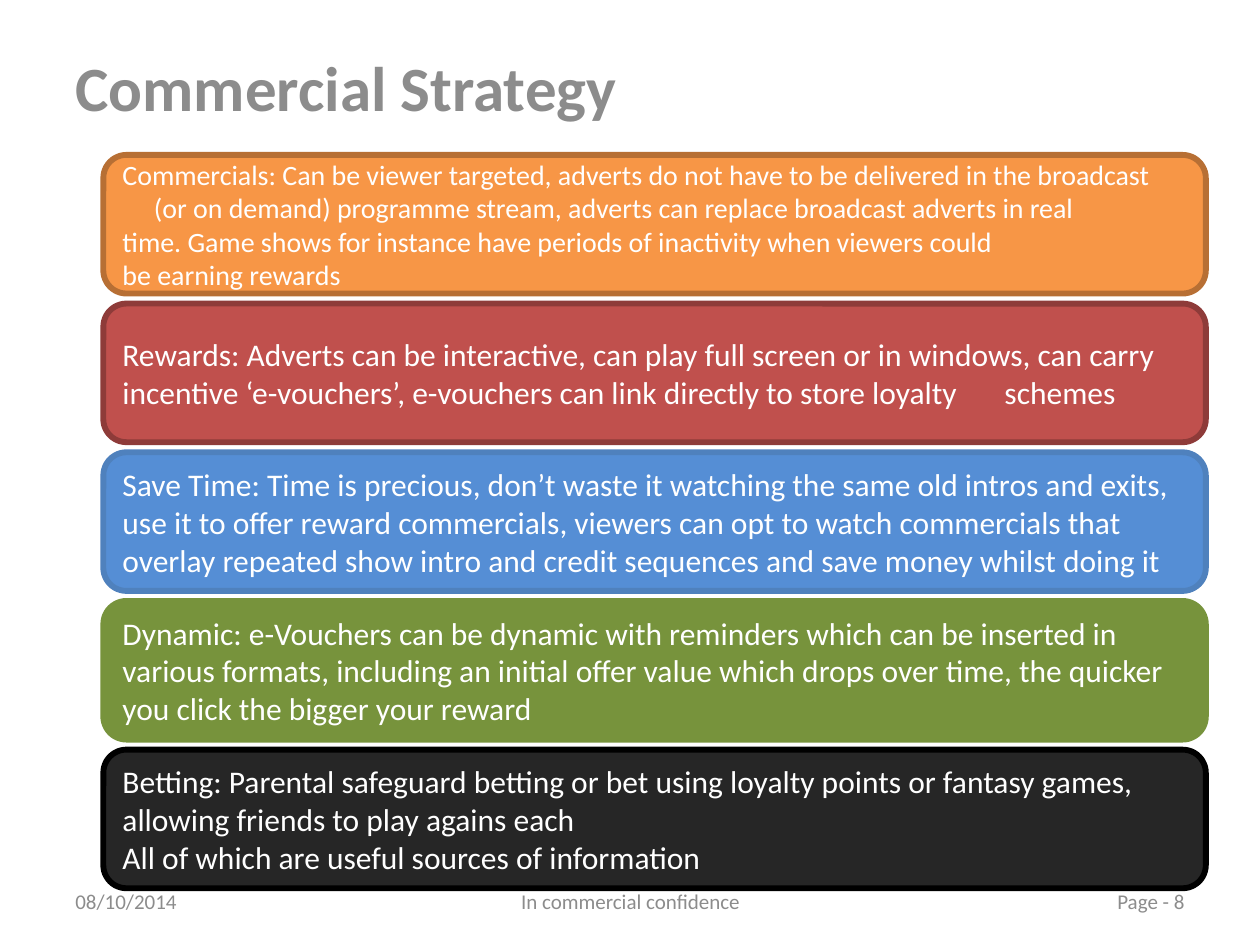
from pptx import Presentation
from pptx.util import Inches, Pt
from pptx.dml.color import RGBColor
from pptx.enum.shapes import MSO_SHAPE
from pptx.enum.text import MSO_ANCHOR, MSO_AUTO_SIZE, PP_ALIGN
from pptx.oxml.ns import qn
from lxml.etree import SubElement

GREY = RGBColor(0x8C, 0x8C, 0x8C)
WHITE = RGBColor(0xFF, 0xFF, 0xFF)
ORANGE = RGBColor(0xF7, 0x96, 0x46)
RUST = RGBColor(0xB7, 0x6F, 0x34)
RED = RGBColor(0xC0, 0x50, 0x4D)
MAROON = RGBColor(0x8E, 0x3B, 0x39)
SKY = RGBColor(0x55, 0x8E, 0xD5)
BLUE = RGBColor(0x4F, 0x81, 0xBD)
GREEN = RGBColor(0x77, 0x93, 0x3C)
DARK = RGBColor(0x26, 0x26, 0x26)
BLACK = RGBColor(0x00, 0x00, 0x00)


def write(frame, text, size, color, align=PP_ALIGN.LEFT, bold=False, stops=()):
    frame.text = text
    layout = {"word_wrap": True, "auto_size": MSO_AUTO_SIZE.NONE,
              "vertical_anchor": MSO_ANCHOR.MIDDLE}
    for key, value in layout.items():
        setattr(frame, key, value)
    style = {"name": "Calibri", "size": Pt(size), "bold": bold}
    for para in frame.paragraphs:
        para.alignment = align
        if stops:
            tabs = SubElement(para._p.get_or_add_pPr(), qn("a:tabLst"))
            for stop in stops:
                SubElement(tabs, qn("a:tab"), pos=str(Inches(stop)), algn="l")
        for run in para.runs:
            for key, value in style.items():
                setattr(run.font, key, value)
            run.font.color.rgb = color


deck = Presentation()
deck.slide_width, deck.slide_height = Inches(10), Inches(7.5)
slide = deck.slides.add_slide(deck.slide_layouts[5])

title = slide.shapes.title
spot = {"left": 0.5, "top": 0.06, "width": 6, "height": 1.25}
for key, value in spot.items():
    setattr(title, key, Inches(value))
write(title.text_frame, "Commercial Strategy", 36, GREY, bold=True)

notes = [
    ("08/10/2014", 0.5, 2.33, PP_ALIGN.LEFT),
    ("In commercial confidence", 3.42, 3.17, PP_ALIGN.CENTER),
    ("Page - 8", 7.17, 2.33, PP_ALIGN.RIGHT),
]
for text, left, width, align in notes:
    box = slide.shapes.add_textbox(Inches(left), Inches(6.95), Inches(width), Inches(0.4))
    write(box.text_frame, text, 12, GREY, align)

panels = [
    ("Commercials: Can be viewer targeted, adverts do not have to be delivered in the broadcast"
     "\v\t(or on demand) programme stream, adverts can replace broadcast adverts in real"
     "\vtime. Game shows for instance have periods of inactivity when viewers could"
     "\vbe earning rewards", 16, ORANGE, RUST),
    ("Rewards: Adverts can be interactive, can play full screen or in windows, can carry "
     "incentive ‘e-vouchers’, e-vouchers can link directly to store loyalty\tschemes",
     18, RED, MAROON),
    ("Save Time: Time is precious, don’t waste it watching the same old intros and exits, "
     "use it to offer reward commercials, viewers can opt to watch commercials that "
     "overlay repeated show intro and credit sequences and save money whilst doing it",
     18, SKY, BLUE),
    ("Dynamic: e-Vouchers can be dynamic with reminders which can be inserted in "
     "various formats, including an initial offer value which drops over time, the quicker "
     "you click the bigger your reward", 18, GREEN, GREEN),
    ("Betting: Parental safeguard betting or bet using loyalty points or fantasy games, "
     "allowing friends to play agains each\nAll of which are useful sources of information",
     18, DARK, BLACK),
]
for row, (text, size, fill, edge) in enumerate(panels):
    panel = slide.shapes.add_shape(MSO_SHAPE.ROUNDED_RECTANGLE, Inches(0.82),
                                   Inches(1.23 + 1.18 * row), Inches(8.75), Inches(1.1))
    panel.shadow.inherit = False
    panel.fill.solid()
    panel.fill.fore_color.rgb = fill
    panel.line.color.rgb = edge
    panel.line.width = Pt(3.35)
    write(panel.text_frame, text, size, WHITE, stops=(0.25, 7))

deck.save("out.pptx")
